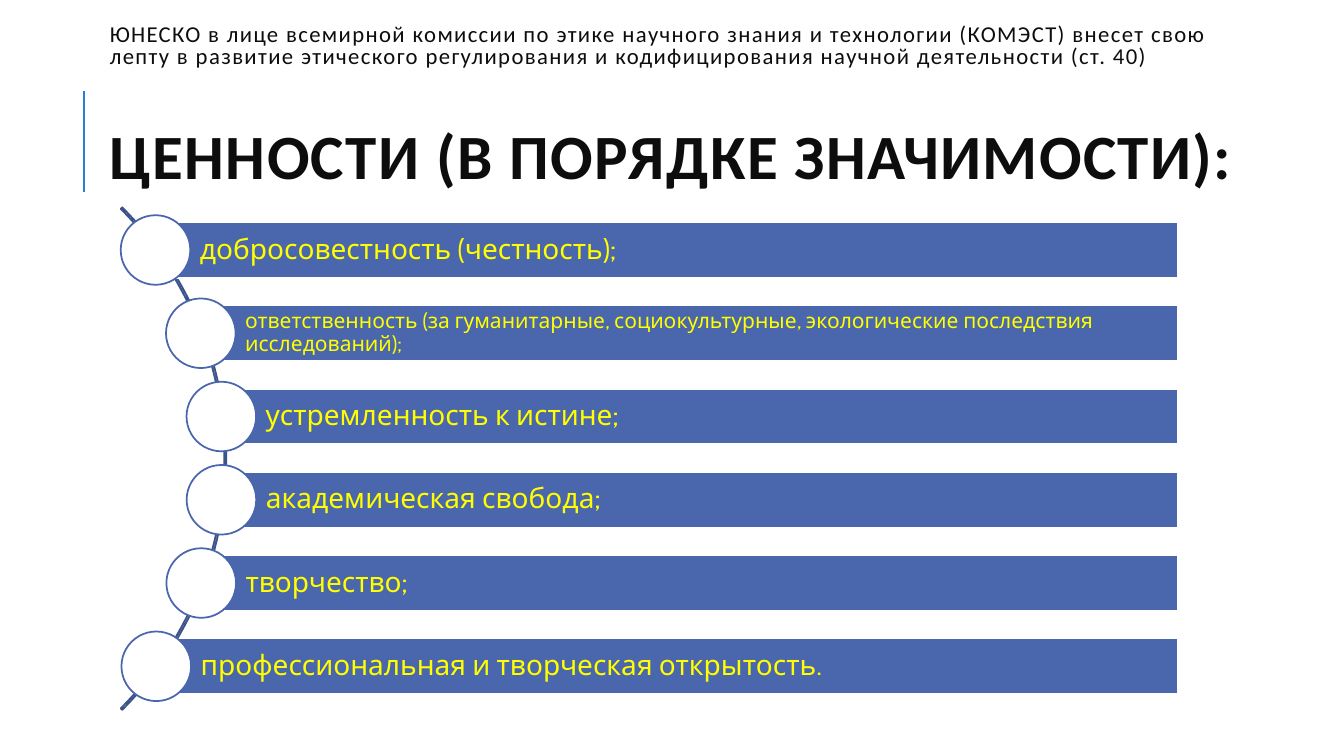
import math
from pptx import Presentation, util as u
from pptx.dml.color import RGBColor
from pptx.enum import shapes, text
from pptx.oxml import ns, xmlchemy

INK = RGBColor(0x0D, 0x0D, 0x0D)
ACCENT = RGBColor(0x29, 0x7F, 0xD5)
BLUE = RGBColor(0x4A, 0x66, 0xAC)
NAVY = RGBColor(0x3B, 0x52, 0x8A)
YELLOW = RGBColor(0xFF, 0xFF, 0x00)
WHITE = RGBColor(0xFF, 0xFF, 0xFF)

VALUES = [
    ("добросовестность (честность);", 20),
    ("ответственность (за гуманитарные, социокультурные, экологические последствия исследований);", 15),
    ("устремленность к истине;", 20),
    ("академическая свобода;", 20),
    ("творчество;", 20),
    ("профессиональная и творческая открытость.", 20),
]


def write(paragraph, wording, font, size, color, bold=False, tracking=0, line=0.9, before=0):
    paragraph.alignment = text.PP_ALIGN.LEFT
    paragraph.line_spacing = line
    paragraph.space_before = u.Pt(before)
    run = paragraph.add_run()
    run.text = wording
    run.font.name, run.font.size, run.font.bold = font, u.Pt(size), bold
    run.font.color.rgb = color
    if tracking:
        run.font._element.set("spc", str(tracking * 100))


def add_shape(kind, left, top, width, height, fill, outline):
    shape = slide.shapes.add_shape(kind, *map(u.Inches, (left, top, width, height)))
    shape.shadow.inherit = False
    shape.fill.solid()
    shape.fill.fore_color.rgb = fill
    shape.line.color.rgb = outline
    shape.line.width = u.Pt(1.25)
    return shape


presentation = Presentation()
presentation.slide_width, presentation.slide_height = u.Inches(13.33), u.Inches(7.5)
slide = presentation.slides.add_slide(presentation.slide_layouts[5])

rule = slide.shapes.add_connector(
    shapes.MSO_CONNECTOR.STRAIGHT, u.Inches(0.83), u.Inches(1.9), u.Inches(0.83), u.Inches(0.9))
rule.line.color.rgb = ACCENT
rule.line.width = u.Pt(1.5)
rule._element.spPr.append(xmlchemy.OxmlElement("a:effectLst"))

title = slide.shapes.title
title.left, title.top, title.width, title.height = map(u.Inches, (0.99, 0, 11.53, 2.15))
frame = title.text_frame
frame.word_wrap = True
frame.auto_size = text.MSO_AUTO_SIZE.NONE
frame.vertical_anchor = text.MSO_ANCHOR.MIDDLE
write(frame.paragraphs[0],
      "ЮНЕСКО в лице всемирной комиссии по этике научного знания и технологии (КОМЭСТ) "
      "внесет свою лепту в развитие этического регулирования и кодифицирования научной деятельности (ст. 40)",
      "Calibri", 16.2, INK, tracking=1, line=0.8)
write(frame.add_paragraph(), "ЦЕННОСТИ (В ПОРЯДКЕ ЗНАЧИМОСТИ):",
      "Calibri", 45, INK, bold=True, tracking=1, line=0.8, before=44)

ARC_X, ARC_Y, ARC_SIZE = -1.28, 4.55, 7.05
arc = add_shape(shapes.MSO_SHAPE.BLOCK_ARC, ARC_X - ARC_SIZE / 2, ARC_Y - ARC_SIZE / 2,
                ARC_SIZE, ARC_SIZE, BLUE, NAVY)
arc.fill.background()
for index, setting in enumerate((189, 27, 0.003)):
    arc.adjustments[index] = setting

FIRST_Y, LAST_Y = 2.48, 6.61
PITCH = (LAST_Y - FIRST_Y) / (len(VALUES) - 1)
ORBIT, BAR_RIGHT, BAR_HEIGHT, CIRCLE = 3.5, 11.68, 0.55, 0.69

for row, (value, size) in enumerate(VALUES):
    y = FIRST_Y + row * PITCH
    x = ARC_X + math.sqrt(ORBIT ** 2 - (y - ARC_Y) ** 2)
    bar = add_shape(shapes.MSO_SHAPE.RECTANGLE, x, y - BAR_HEIGHT / 2,
                    BAR_RIGHT - x, BAR_HEIGHT, BLUE, WHITE)
    frame = bar.text_frame
    frame.word_wrap = True
    frame.vertical_anchor = text.MSO_ANCHOR.MIDDLE
    frame.margin_left = u.Inches(0.44)
    frame.margin_top = frame.margin_right = frame.margin_bottom = u.Pt(size / 5)
    write(frame.paragraphs[0], value, "Cabin", size, YELLOW)
    add_shape(shapes.MSO_SHAPE.OVAL, x - CIRCLE / 2, y - CIRCLE / 2, CIRCLE, CIRCLE, WHITE, BLUE)

presentation.save("out.pptx")
